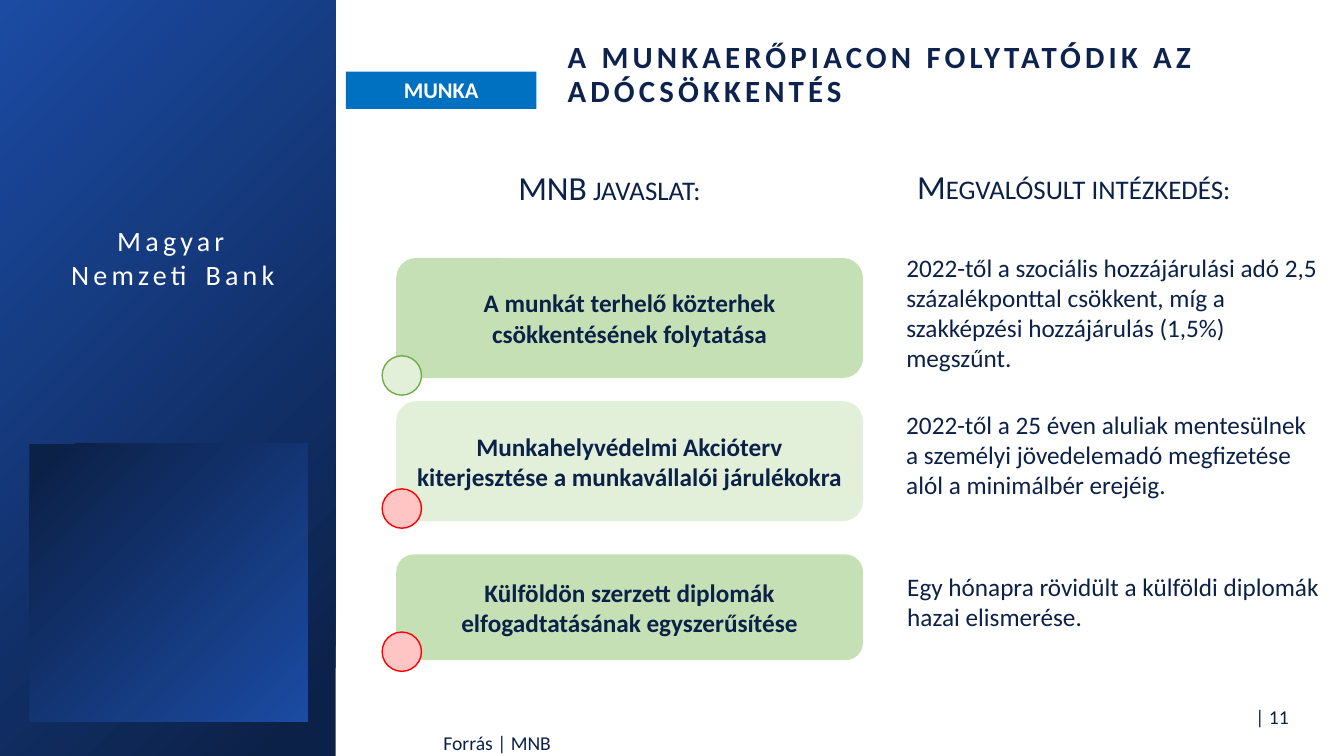
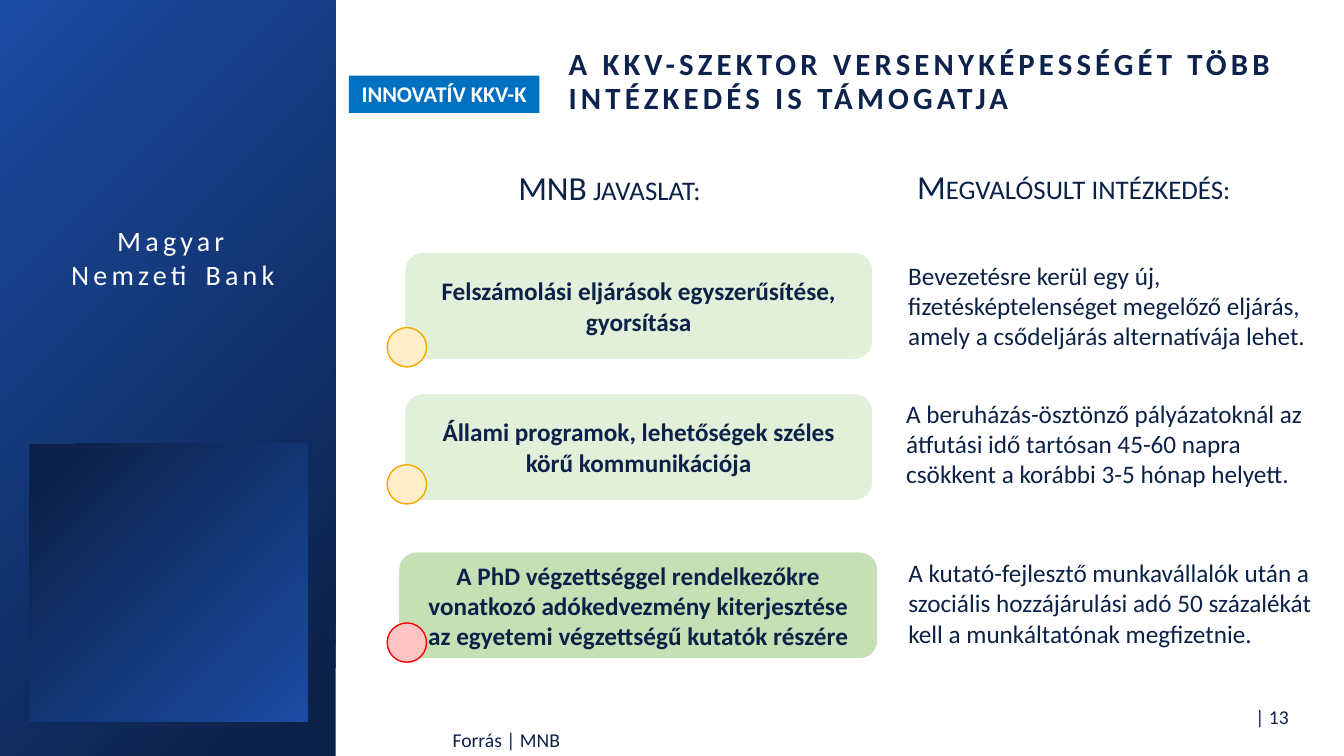
from pptx import Presentation
from pptx.dml.color import RGBColor
from pptx.enum.shapes import MSO_SHAPE as Shape
from pptx.enum.text import MSO_ANCHOR as Anchor, PP_ALIGN as Align
from pptx.util import Inches, Pt

# Shared style
FONT = "Calibri"
NAVY, BLUE, TITLE, WHITE, TAG = "0C2148", "1B4BA3", "0D234D", "FFFFFF", "0070C0"
CARD = {"pale": "E2F0D9", "green": "C5E0B4"}
STATUS = {  # fill and outline of the status dots
    "green": ("E2F0D9", "70AD47"),
    "amber": ("FFEECA", "F6A800"),
    "red": ("FFC5C5", "FF0000"),
}
DOT = 0.39
BANK = "Magyar Nemzeti Bank"
SOURCE = "Forrás | MNB"
HEADINGS = [
    ("MNB javaslat:", (4.67, 1.61, 2.75, 0.49)),
    ("Megvalósult intézkedés:", (8.84, 1.6, 3.62, 0.49)),
]

# Content: each row is (proposal, tint, box), (status, dot top), (measure, box)
SLIDES = [
    {
        "title": "A MUNKAERŐPIACON FOLYTATÓDIK AZ ADÓCSÖKKENTÉS",
        "title_box": (5.55, 0.36, 7.37, 0.78),
        "tag": "MUNKA", "tag_at": (3.43, 0.71),
        "source_box": (4.3, 7.27, 3.94, 0.23),
        "number": 11, "dot_left": 3.79,
        "rows": [
            (("A munkát terhelő közterhek csökkentésének folytatása",
              "green", (3.93, 2.56, 4.63, 1.19)),
             ("green", 3.53),
             ("2022-től a szociális hozzájárulási adó 2,5 százalékponttal csökkent, "
              "míg a szakképzési hozzájárulás (1,5%) megszűnt.",
              (8.89, 2.45, 4.45, 1.31))),
            (("Munkahelyvédelmi Akcióterv kiterjesztése a munkavállalói járulékokra",
              "pale", (3.93, 3.98, 4.63, 1.19)),
             ("red", 4.85),
             ("2022-től a 25 éven aluliak mentesülnek a személyi jövedelemadó "
              "megfizetése alól a minimálbér erejéig.",
              (8.89, 4.01, 4.34, 1.01))),
            (("Külföldön szerzett diplomák elfogadtatásának egyszerűsítése",
              "green", (3.93, 5.5, 4.63, 1.05)),
             ("red", 6.27),
             ("Egy hónapra rövidült a külföldi diplomák hazai elismerése.",
              (8.9, 5.62, 4.33, 0.71))),
        ],
    },
    {
        "title": "A KKV-SZEKTOR VERSENYKÉPESSÉGÉT TÖBB INTÉZKEDÉS IS TÁMOGATJA",
        "title_box": (5.56, 0.43, 7.34, 0.78),
        "tag": "INNOVATÍV KKV-K", "tag_at": (3.46, 0.75),
        "source_box": (4.39, 7.15, 3.94, 0.4),
        "number": 13, "dot_left": 3.84,
        "rows": [
            (("Felszámolási eljárások egyszerűsítése, gyorsítása",
              "pale", (4.02, 2.51, 4.63, 1.05)),
             ("amber", 3.25),
             ("Bevezetésre kerül egy új, fizetésképtelenséget megelőző eljárás, "
              "amely a csődeljárás alternatívája lehet.",
              (8.91, 2.53, 4.33, 1.01))),
            (("Állami programok, lehetőségek széles körű kommunikációja",
              "pale", (4.02, 3.91, 4.63, 1.05)),
             ("amber", 4.61),
             ("A beruházás-ösztönző pályázatoknál az átfutási idő tartósan 45-60 napra "
              "csökkent a korábbi 3-5 hónap helyett.",
              (8.89, 3.9, 4.43, 1.01))),
            (("A PhD végzettséggel rendelkezőkre vonatkozó adókedvezmény kiterjesztése "
              "az egyetemi végzettségű kutatók részére",
              "green", (3.96, 5.48, 4.74, 1.05)),
             ("red", 6.18),
             ("A kutató-fejlesztő munkavállalók után a szociális hozzájárulási adó "
              "50 százalékát kell a munkáltatónak megfizetnie.",
              (8.91, 5.48, 4.38, 1.01))),
        ],
    },
]


def rgb(value):
    return RGBColor.from_string(value)


def write(shape, text, size, color=NAVY, bold=False, align=Align.LEFT,
          anchor=Anchor.MIDDLE, line_spacing=None, **run_attributes):
    frame = shape.text_frame
    frame.word_wrap = True
    frame.vertical_anchor = anchor
    paragraph = frame.paragraphs[0]
    run = paragraph.add_run()
    run.text = text
    for name, value in run_attributes.items():
        run._r.get_or_add_rPr().set(name, value)
    paragraph.alignment = align
    paragraph.line_spacing = line_spacing
    font = paragraph.font
    font.name, font.size, font.bold = FONT, Pt(size), bold
    font.color.rgb = rgb(color)


def add_label(slide, box, text, size, **style):
    label = slide.shapes.add_textbox(*map(Inches, box))
    write(label, text, size, **style)
    return label


def add_block(slide, kind, box, fill=None, line=None):
    block = slide.shapes.add_shape(kind, *map(Inches, box))
    block.shadow.inherit = False
    if fill:
        block.fill.solid()
        block.fill.fore_color.rgb = rgb(fill)
    if line:
        block.line.color.rgb = rgb(line)
        block.line.width = Pt(1)
    else:
        block.line.fill.background()
    return block


def add_gradient(slide, box, rotation=0):
    panel = add_block(slide, Shape.RECTANGLE, box)
    panel.rotation = rotation
    panel.fill.gradient()
    panel.fill.gradient_angle = 135
    for stop, position, color in zip(panel.fill.gradient_stops, (0.06, 1), (NAVY, BLUE)):
        stop.position = position
        stop.color.rgb = rgb(color)


def add_frame(slide, page):
    # Side band, page number, title, source and tag
    add_gradient(slide, (0, 0, 3.33, 7.5))
    add_gradient(slide, (0.29, 4.4, 2.76, 2.76), rotation=180)
    add_label(slide, (0.45, 2.17, 2.53, 0.77), BANK, 20, color=WHITE,
              align=Align.CENTER, anchor=Anchor.TOP, spc="300")
    add_label(slide, (12.19, 6.9, 0.69, 0.41), f"| {page['number']}", 14, align=Align.RIGHT)
    title = add_label(slide, page["title_box"], page["title"], 22, color=TITLE,
                      bold=True, line_spacing=0.9, spc="300").text_frame
    title.margin_left = title.margin_right = Inches(0.08)
    title.margin_top = title.margin_bottom = Inches(0.04)
    add_label(slide, page["source_box"], SOURCE, 14, line_spacing=0.9)
    tag = add_block(slide, Shape.RECTANGLE, (*page["tag_at"], 1.89, 0.37), TAG)
    write(tag, page["tag"], 16, color=WHITE, bold=True, align=Align.CENTER, anchor=Anchor.TOP)
    for heading, box in HEADINGS:
        add_label(slide, box, heading, 24, align=Align.CENTER, cap="small")


def add_rows(slide, page):
    # Proposal cards with their status dots, and the measures beside them
    for (proposal, tint, card_box), (status, dot_top), (measure, box) in page["rows"]:
        card = add_block(slide, Shape.ROUNDED_RECTANGLE, card_box, CARD[tint])
        write(card, proposal, 18, bold=True, align=Align.CENTER)
        add_block(slide, Shape.OVAL, (page["dot_left"], dot_top, DOT, DOT), *STATUS[status])
        add_label(slide, box, measure, 18, anchor=Anchor.TOP)


def main():
    deck = Presentation()
    deck.slide_width, deck.slide_height = Inches(13.33), Inches(7.5)
    for page in SLIDES:
        slide = deck.slides.add_slide(deck.slide_layouts[6])
        add_frame(slide, page)
        add_rows(slide, page)
    deck.save("out.pptx")


if __name__ == "__main__":
    main()
